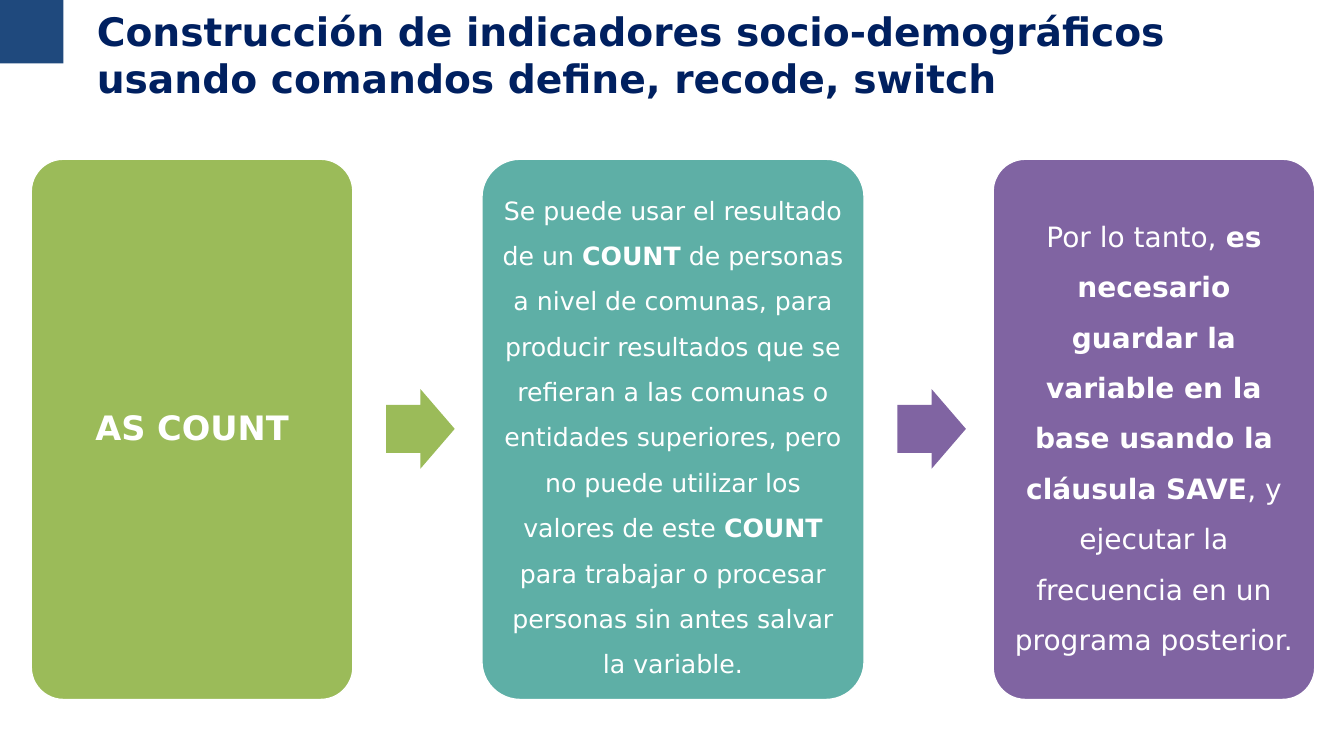
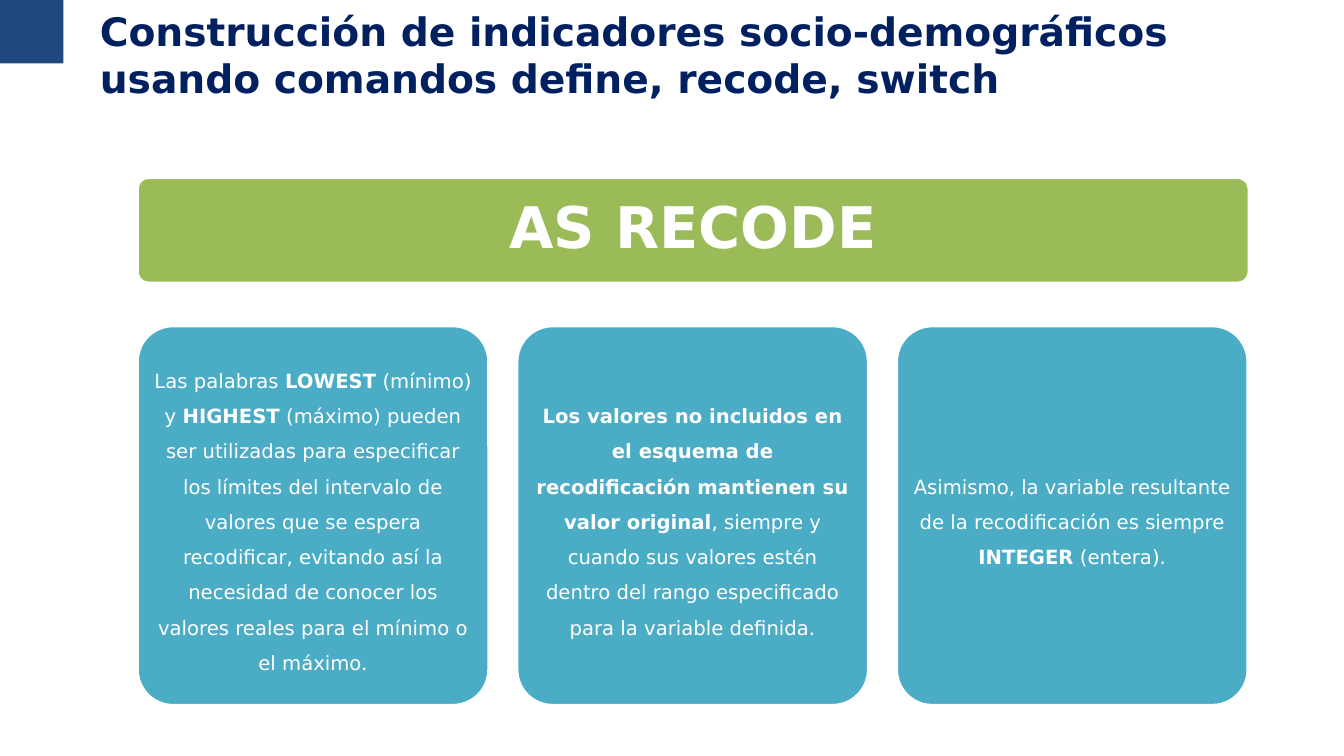
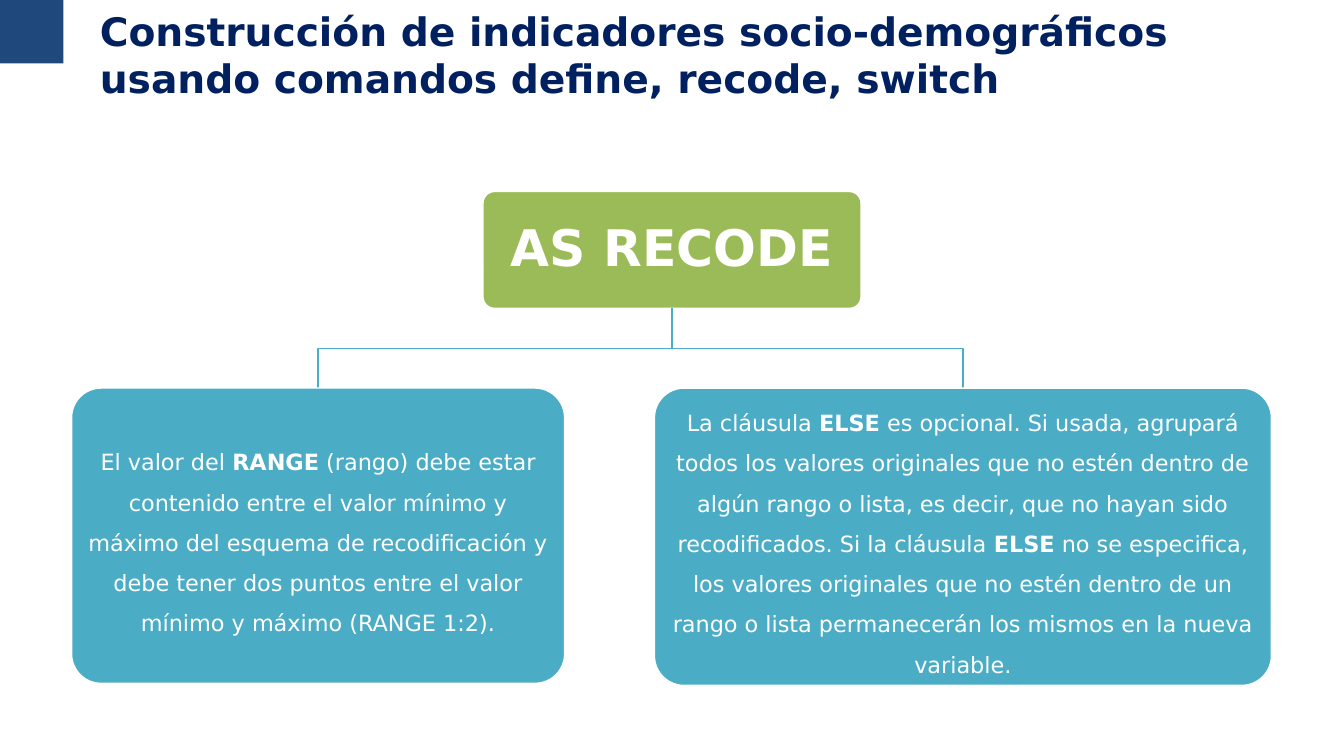
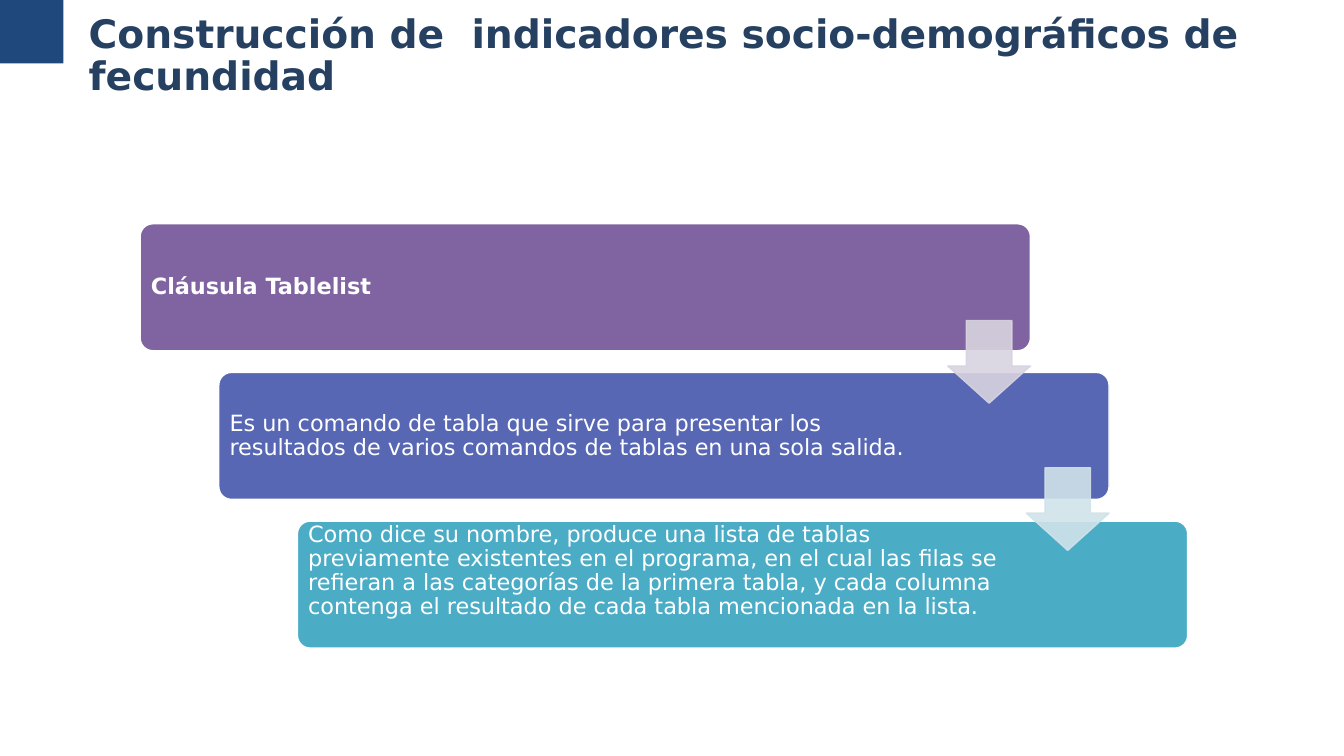
"""Builds four slides on census indicator commands, laid out on a tenth-inch grid."""
from dataclasses import dataclass
from typing import Any

from lxml import etree
from pptx import Presentation
from pptx.dml.color import RGBColor
from pptx.enum.shapes import MSO_SHAPE
from pptx.enum.text import MSO_ANCHOR, MSO_AUTO_SIZE, PP_ALIGN
from pptx.oxml.ns import qn
from pptx.util import Inches, Pt

RECT, ROUND = MSO_SHAPE.RECTANGLE, MSO_SHAPE.ROUNDED_RECTANGLE
RIGHT, DOWN = MSO_SHAPE.RIGHT_ARROW, MSO_SHAPE.DOWN_ARROW
LEFT, MID = PP_ALIGN.LEFT, PP_ALIGN.CENTER
FONT = "DejaVu Sans"
COLORS = {
    "band": "1F497D", "navy": "002060", "ink": "254061", "white": "FFFFFF",
    "green": "9BBB59", "teal": "5EAFA6", "plum": "8064A2", "sky": "4BACC6",
    "blue": "5767B4", "mauve": "D8D3E0", "mist": "D0E3EA",
}
FRAME = {"word_wrap": True, "auto_size": MSO_AUTO_SIZE.NONE,
         "vertical_anchor": MSO_ANCHOR.MIDDLE}
HEAD = "Construcción de indicadores socio-demográficos usando comandos define, recode, switch"


@dataclass(frozen=True)
class Box:
    """A place in grid cells."""
    x: float
    y: float
    w: float
    h: float


@dataclass(frozen=True)
class Card:
    """A rounded panel; asterisks in its text mark bold parts."""
    text: str
    fill: str
    size: float
    pad: float
    gap: float = 1.5
    align: Any = MID
    more: tuple = ()


@dataclass(frozen=True)
class Head:
    """A title with its place and look."""
    text: str
    box: Box
    pad: float
    color: str = "navy"
    gap: float = 1.0


def cell(n: float) -> int:
    """Turns grid cells into a length."""
    return Inches(n / 10)


def tone(name: str) -> RGBColor:
    """Looks up a colour."""
    return RGBColor.from_string(COLORS[name])


def apply(item: Any, values: dict) -> None:
    """Sets attributes from a dict."""
    for key, value in values.items():
        setattr(item, key, value)


def place(box: Box) -> dict:
    """Gives a box as shape attributes."""
    return {"left": cell(box.x), "top": cell(box.y),
            "width": cell(box.w), "height": cell(box.h)}


def write(frame: Any, text: str, size: float, color: str, align: Any, gap: float) -> None:
    """Writes one paragraph, bold between asterisks."""
    para = frame.paragraphs[0]
    apply(para, {"alignment": align, "line_spacing": gap})
    for i, part in enumerate(text.split("*")):
        if part:
            run = para.add_run()
            run.text = part
            apply(run.font, {"name": FONT, "size": Pt(size), "bold": i % 2 == 1})
            run.font.color.rgb = tone(color)


def draw(slide: Any, kind: Any, box: Box, fill: str, line: str = "", adj: tuple = ()) -> Any:
    """Adds a flat preset shape."""
    shape = slide.shapes.add_shape(kind, *place(box).values())
    shape.shadow.inherit = False
    shape.fill.solid()
    shape.fill.fore_color.rgb = tone(fill)
    if line:
        shape.line.color.rgb = tone(line)
        shape.line.width = Pt(1)
    else:
        shape.line.fill.background()
    for i, value in enumerate(adj):
        shape.adjustments[i] = value
    return shape


def panel(slide: Any, box: Box, card: Card) -> None:
    """Adds a card with its text."""
    frame = draw(slide, ROUND, box, card.fill, "white", (0.1,)).text_frame
    pads = {f"margin_{side}": cell(card.pad) for side in ("left", "top", "right", "bottom")}
    apply(frame, FRAME | pads | {key: cell(n) for key, n in card.more})
    write(frame, card.text, card.size, "white", card.align, card.gap)


def start(deck: Any, head: Head) -> Any:
    """Adds a slide and its title."""
    slide = deck.slides.add_slide(deck.slide_layouts[5])
    title = slide.shapes.title
    apply(title, place(head.box))
    apply(title.text_frame, FRAME | {"margin_left": cell(head.pad)})
    write(title.text_frame, f"*{head.text}*", 28, head.color, LEFT, head.gap)
    return slide


def brand(deck: Any, slide: Any) -> None:
    """Moves the corner band into the shared layout."""
    band = draw(slide, RECT, Box(0, 0, 6.3, 6.3), "band")
    band.element.nvSpPr.cNvPr.set("id", "20")
    deck.slide_layouts[5].shapes.element.append(band.element)


def fade(shape: Any, share: int) -> None:
    """Makes fill and line partly clear."""
    for color in shape.element.spPr.iter(qn("a:srgbClr")):
        etree.SubElement(color, qn("a:alpha")).set("val", str(share * 1000))


def link(slide: Any, points: list) -> None:
    """Draws an open bent line."""
    (x, y), *rest = [(cell(a), cell(b)) for a, b in points]
    pen = slide.shapes.build_freeform(x, y)
    pen.add_line_segments(rest, close=False)
    shape = pen.convert_to_shape()
    shape.shadow.inherit = False
    shape.fill.background()
    shape.line.color.rgb = tone("sky")
    shape.line.width = Pt(1)


def count(deck: Any) -> None:
    """Builds the COUNT slide."""
    slide = start(deck, Head(HEAD, Box(1.7, 0, 127.6, 10.7), 7.9))
    brand(deck, slide)
    cards = [
        (31.9, Card("*AS COUNT*", "green", 24, 1, 0.9)),
        (37.9, Card("Se puede usar el resultado de un *COUNT* de personas a nivel de comunas, "
                    "para producir resultados que se refieran a las comunas o entidades "
                    "superiores, pero no puede utilizar los valores de este *COUNT* para "
                    "trabajar o procesar personas sin antes salvar la variable.",
                    "teal", 18, 0.7)),
        (31.9, Card("Por lo tanto, *es necesario guardar la variable en la base usando la "
                    "cláusula SAVE*, y ejecutar la frecuencia en un programa posterior.",
                    "plum", 20, 0.8)),
    ]
    x, gap = 3.1, 12.8
    for i, (wide, card) in enumerate(cards):
        if i:
            draw(slide, RIGHT, Box(x - 9.5, 38.6, 6.8, 7.9),
                 ("green", "plum")[i - 1], adj=(0.6, 0.5))
        panel(slide, Box(x, 15.8, wide, 53.6), card)
        x += wide + gap


def recode(deck: Any) -> None:
    """Builds the RECODE slide with three columns."""
    slide = start(deck, Head(HEAD, Box(2, 0, 127.6, 10.7), 7.9))
    panel(slide, Box(13.7, 17.7, 110.1, 10.3), Card("*AS RECODE*", "green", 41, 1.7, 0.9))
    texts = [
        "Las palabras *LOWEST* (mínimo) y *HIGHEST* (máximo) pueden ser utilizadas para "
        "especificar los límites del intervalo de valores que se espera recodificar, "
        "evitando así la necesidad de conocer los valores reales para el mínimo o el máximo.",
        "*Los valores no incluidos en el esquema de recodificación mantienen su valor "
        "original*, siempre y cuando sus valores estén dentro del rango especificado para "
        "la variable definida.",
        "Asimismo, la variable resultante de la recodificación es siempre *INTEGER* (entera).",
    ]
    for i, text in enumerate(texts):
        panel(slide, Box(13.7 + 37.65 * i, 32.4, 34.7, 37.5), Card(text, "sky", 14, 0.6))


def tree(deck: Any) -> None:
    """Builds the RECODE slide with two branches."""
    slide = start(deck, Head(HEAD, Box(2, 0, 127.6, 10.7), 7.9))
    root = Box(47.9, 19, 37.5, 11.6)
    panel(slide, root, Card("*AS RECODE*", "green", 36, 1.5, 0.9))
    leaves = [
        (Box(7.1, 38.5, 48.9, 29.3),
         "El valor del *RANGE* (rango) debe estar contenido entre el valor mínimo y máximo "
         "del esquema de recodificación y debe tener dos puntos entre el valor mínimo y "
         "máximo (RANGE 1:2)."),
        (Box(64.9, 38.5, 61.2, 29.5),
         "La cláusula *ELSE* es opcional. Si usada, agrupará todos los valores originales "
         "que no estén dentro de algún rango o lista, es decir, que no hayan sido "
         "recodificados. Si la cláusula *ELSE* no se especifica, los valores originales que "
         "no estén dentro de un rango o lista permanecerán los mismos en la nueva variable."),
    ]
    stem, base = root.x + root.w / 2, root.y + root.h
    for box, text in leaves:
        mid, bend = box.x + box.w / 2, (base + box.y) / 2
        link(slide, [(stem, base), (stem, bend), (mid, bend), (mid, box.y)])
        panel(slide, box, Card(text, "sky", 16, 0.7))


def steps(deck: Any) -> None:
    """Builds the Tablelist stairs."""
    slide = start(deck, Head("Construcción de  indicadores socio-demográficos de fecundidad",
                             Box(8.8, 1.8, 121.6, 7.7), 0, "ink", 0.9))
    side = ("margin_right", 16.7)
    stairs = [
        ("*Cláusula Tablelist*", "plum", (side,)),
        ("Es un comando de tabla que sirve para presentar los resultados de varios comandos "
         "de tablas en una sola salida.", "blue", (side,)),
        ("Como dice su nombre, produce una lista de tablas previamente existentes en el "
         "programa, en el cual las filas se refieran a las categorías de la primera tabla, "
         "y cada columna contenga el resultado de cada tabla mencionada en la lista.",
         "sky", (side, ("margin_top", 0), ("margin_bottom", 2.6))),
    ]
    for i, (text, fill, more) in enumerate(stairs):
        panel(slide, Box(13.9 + 7.8 * i, 22.2 + 14.75 * i, 88.3, 12.6),
              Card(text, fill, 16, 0.7, 0.9, LEFT, more))
    for i, fill in enumerate(("mauve", "mist")):
        fade(draw(slide, DOWN, Box(94 + 7.8 * i, 31.8 + 14.6 * i, 8.2, 8.2),
                  fill, fill, (0.55, 0.45)), 90)


def main() -> None:
    """Builds and saves the deck."""
    deck = Presentation()
    apply(deck, {"slide_width": Inches(13.33), "slide_height": Inches(7.5)})
    for build in (count, recode, tree, steps):
        build(deck)
    deck.save("out.pptx")


if __name__ == "__main__":
    main()
